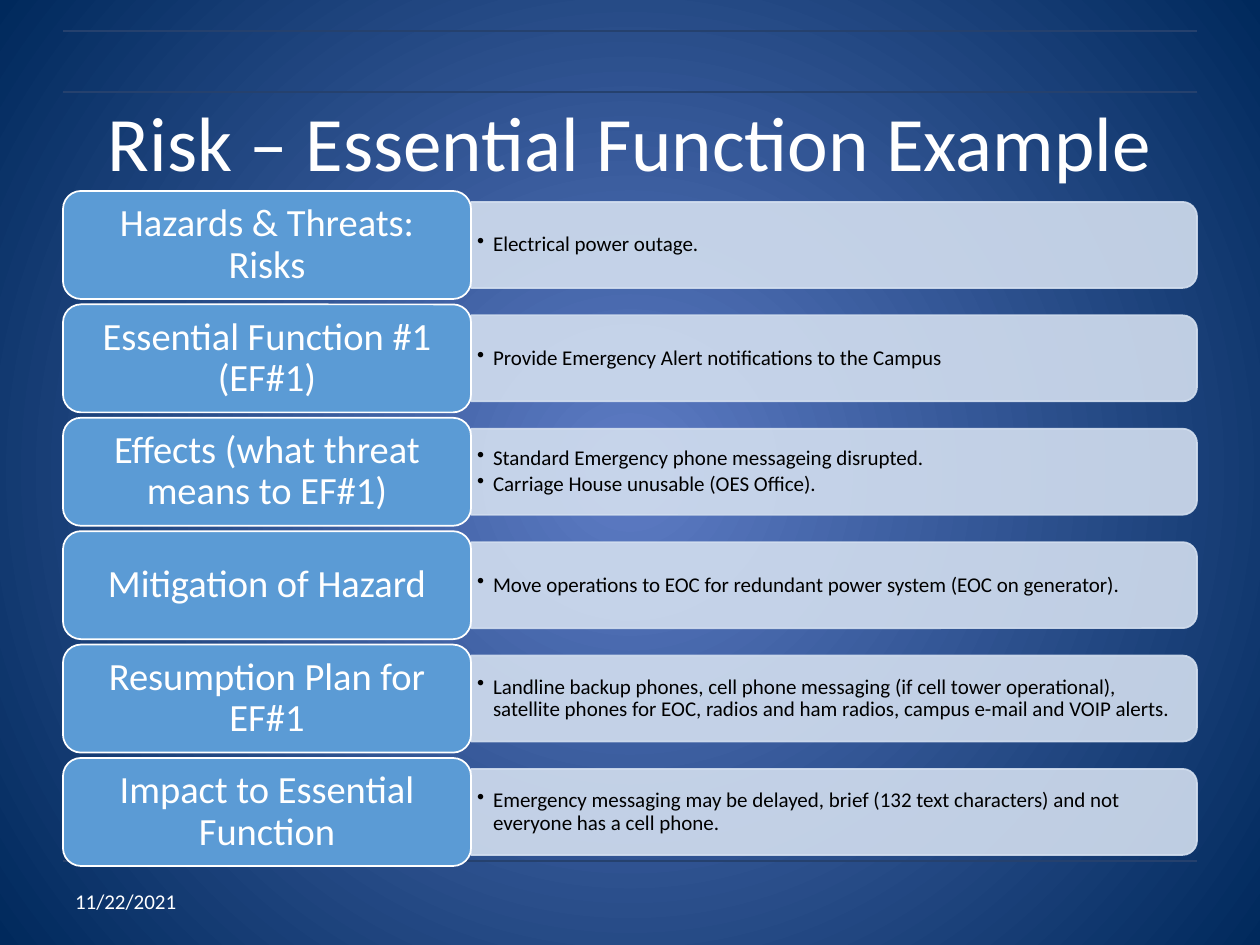
from lxml.etree import SubElement
from pptx import Presentation
from pptx.dml.color import RGBColor
from pptx.enum.shapes import MSO_CONNECTOR, MSO_SHAPE
from pptx.enum.text import MSO_ANCHOR, PP_ALIGN
from pptx.oxml.ns import qn
from pptx.util import Emu, Pt

PX = 914400 / 126
WHITE = RGBColor(0xFF, 0xFF, 0xFF)
BLACK = RGBColor(0x00, 0x00, 0x00)
GLOW = RGBColor(0x5E, 0x7C, 0xC5)
NAVY = RGBColor(0x00, 0x29, 0x5C)
RULE = RGBColor(0x25, 0x41, 0x6E)
LABEL = RGBColor(0x5B, 0x9B, 0xD5)
BAR = RGBColor(0xD2, 0xDE, 0xEF)

ROWS = [
    ("Hazards & Threats: Risks", ["Electrical power outage."]),
    ("Essential Function #1 (EF#1)",
     ["Provide Emergency Alert notifications to the Campus"]),
    ("Effects (what threat means to EF#1)",
     ["Standard Emergency phone messageing disrupted.",
      "Carriage House unusable (OES Office)."]),
    ("Mitigation of Hazard",
     ["Move operations to EOC for redundant power system (EOC on generator)."]),
    ("Resumption Plan for EF#1",
     ["Landline backup phones, cell phone messaging (if cell tower operational), "
      "satellite phones for EOC, radios and ham radios, campus e-mail and VOIP alerts."]),
    ("Impact to Essential Function",
     ["Emergency messaging may be delayed, brief (132 text characters) "
      "and not everyone has a cell phone."]),
]


def px(*values):
    return [Emu(round(v * PX)) for v in values]


def write(sp, lines, size, color=WHITE, align=PP_ALIGN.LEFT, inset=(12, 6),
          spacing=None, after=0, bullet=False):
    tf = sp.text_frame
    tf.word_wrap = True
    tf.vertical_anchor = MSO_ANCHOR.MIDDLE
    tf.margin_left, tf.margin_top = tf.margin_right, tf.margin_bottom = px(*inset)
    for i, text in enumerate(lines):
        p = tf.add_paragraph() if i else tf.paragraphs[0]
        if bullet:
            pPr = p._p.get_or_add_pPr()
            indent = px(16)[0]
            pPr.set("marL", str(indent))
            pPr.set("indent", str(-indent))
            SubElement(pPr, qn("a:buChar")).set("char", "•")
        p.alignment = align
        p.line_spacing = spacing
        p.space_after = Pt(after)
        r = p.add_run()
        r.text = text
        r.font.name, r.font.size = "Calibri", Pt(size)
        r.font.color.rgb = color


def add_text(s, box, lines, size, **fmt):
    write(s.shapes.add_textbox(*px(*box)), lines, size, **fmt)


def add_panel(s, kind, box, fill, line):
    sp = s.shapes.add_shape(kind, *px(*box))
    sp.shadow.inherit = False
    sp.fill.solid()
    sp.fill.fore_color.rgb = fill
    sp.line.color.rgb = line
    sp.line.width = Pt(1)
    return sp


def add_background(s):
    fill = s.background.fill
    fill.gradient()
    for stop, color, pos in zip(fill.gradient_stops, (GLOW, NAVY), (0, 1)):
        stop.color.rgb = color
        stop.position = pos
    lin = s._element.find(".//" + qn("a:lin"))
    grad = lin.getparent()
    grad.remove(lin)
    path = SubElement(grad, qn("a:path"))
    path.set("path", "circle")
    rect = SubElement(path, qn("a:fillToRect"))
    for side in "ltrb":
        rect.set(side, "50000")


def add_rules(s, left, right, tops):
    for y in tops:
        line = s.shapes.add_connector(MSO_CONNECTOR.STRAIGHT, *px(left, y, right, y))
        line.line.color.rgb = RULE
        line.line.width = Pt(0.75)
        SubElement(line._element.spPr, qn("a:effectLst"))


def add_row(s, box, label, points):
    x, y, w, h = box
    label_w, bar_h = 408, 86
    bar_w = w - label_w
    bar_x = x + label_w
    bar = add_panel(s, MSO_SHAPE.ROUND_2_SAME_RECTANGLE,
                    (bar_x + (bar_w - bar_h) / 2, y + (h - bar_w) / 2, bar_h, bar_w),
                    BAR, BAR)
    bar.rotation = 90
    for clr in bar._element.spPr.iter(qn("a:srgbClr")):
        SubElement(clr, qn("a:alpha")).set("val", "90000")
    add_text(s, (bar_x, y + 15, bar_w - 4, h - 30), points, 12, color=BLACK,
             inset=(6, 4), spacing=0.9, after=2, bullet=True)
    sp = add_panel(s, MSO_SHAPE.ROUNDED_RECTANGLE, (x, y, label_w, h), LABEL, WHITE)
    write(sp, [label], 22, align=PP_ALIGN.CENTER, spacing=0.9)


def add_list(s, box, rows):
    x, y, w, h = box
    row_h = 108
    pitch = (h - row_h) / (len(rows) - 1)
    for i, (label, points) in enumerate(rows):
        add_row(s, (x, y + i * pitch, w, row_h), label, points)


def main():
    prs = Presentation()
    prs.slide_width, prs.slide_height = px(1260, 945)
    s = prs.slides.add_slide(prs.slide_layouts[6])
    add_background(s)
    add_rules(s, 63, 1197, (861, 31, 92))
    add_text(s, (63, 62, 1134, 158), ["Risk – Essential Function Example"], 44,
             align=PP_ALIGN.CENTER)
    add_text(s, (63, 876, 294, 50), ["11/22/2021"], 12)
    add_list(s, (63, 191, 1134, 675), ROWS)
    prs.save("out.pptx")


if __name__ == "__main__":
    main()
